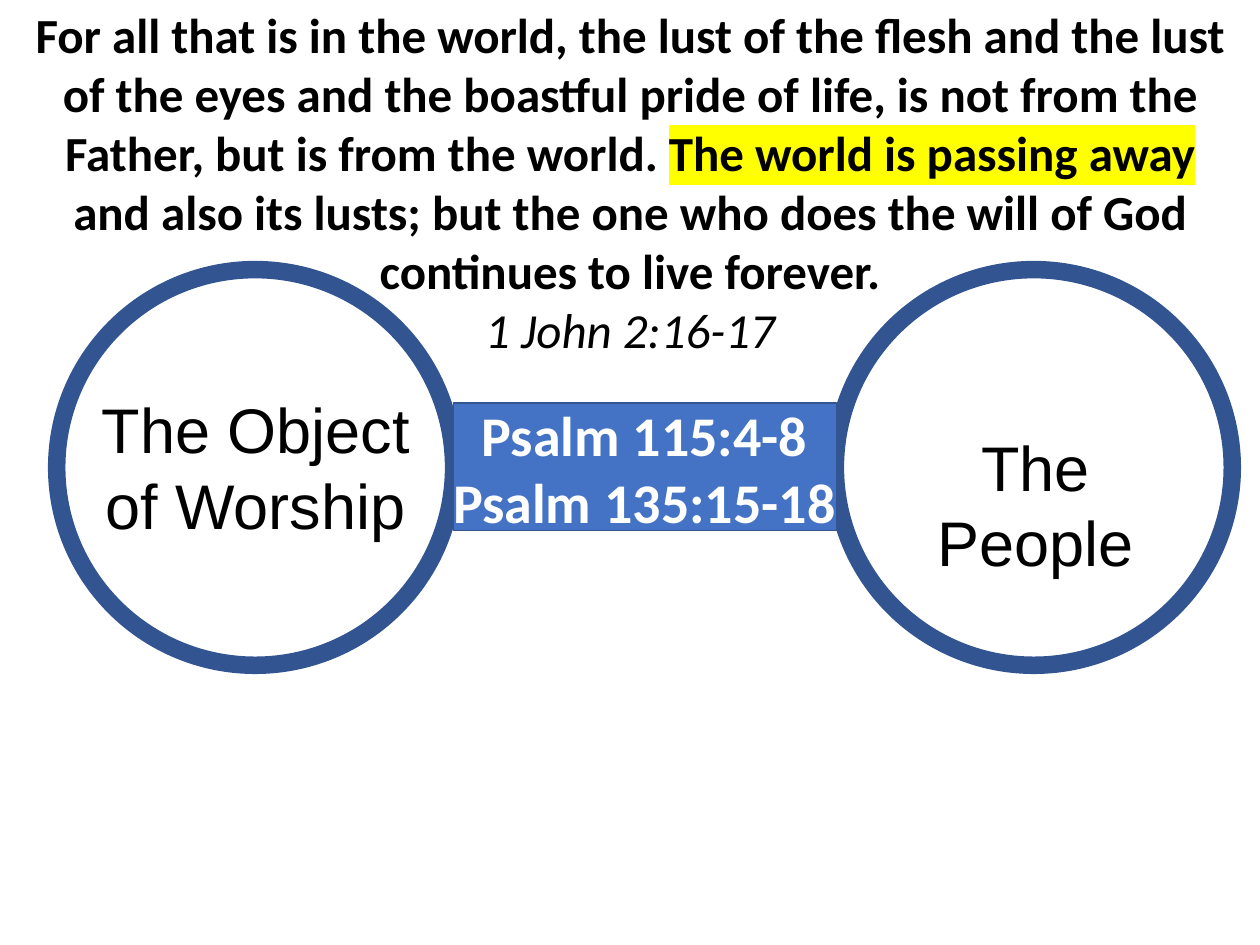
from lxml import etree
from pptx import Presentation
from pptx.enum import shapes, text
from pptx.oxml import ns
from pptx.dml.color import RGBColor
from pptx.util import Inches, Pt

COLORS = {
    "black": "000000",
    "white": "FFFFFF",
    "blue": "4472C4",
    "outline": "325491",
    "highlight": "FFFF00",
}


def rgb(name):
    return RGBColor.from_string(COLORS[name])


def add_shape(s, kind, box, fill, line_width):
    sp = s.shapes.add_shape(kind, *map(Inches, box))
    sp.shadow.inherit = False
    sp.fill.solid()
    sp.fill.fore_color.rgb = rgb(fill)
    sp.line.color.rgb = rgb("outline")
    sp.line.width = Pt(line_width)


def add_textbox(s, box):
    tf = s.shapes.add_textbox(*map(Inches, box)).text_frame
    tf.word_wrap = True
    tf.auto_size = text.MSO_AUTO_SIZE.SHAPE_TO_FIT_TEXT
    tf.paragraphs[0].alignment = text.PP_ALIGN.CENTER
    return tf


def add_run(p, words, size, font="Calibri", color="black", bold=False, italic=False):
    r = p.add_run()
    r.text = words
    r.font.size = Pt(size)
    r.font.bold = bold
    r.font.italic = italic
    r.font.color.rgb = rgb(color)
    r.font.name = font
    return r


def highlight(r):
    latin = r._r.get_or_add_rPr().find(ns.qn("a:latin"))
    mark = etree.Element(ns.qn("a:highlight"))
    etree.SubElement(mark, ns.qn("a:srgbClr"), val=COLORS["highlight"])
    latin.addprevious(mark)


def add_circle(s, left, label, label_box):
    add_shape(s, shapes.MSO_SHAPE.OVAL, (left, 2.14, 3.15, 3.14), "white", 10)
    tf = add_textbox(s, label_box)
    add_run(tf.paragraphs[0], label, 36, "Arial")


def add_psalms(s):
    add_shape(s, shapes.MSO_SHAPE.RECTANGLE, (3.6, 3.2, 3.04, 1.01), "blue", 1)
    for top, psalm in ((3.13, "Psalm 115:4-8"), (3.66, "Psalm 135:15-18")):
        tf = add_textbox(s, (3.47, top, 3.29, 0.64))
        add_run(tf.paragraphs[0], psalm, 32, color="white", bold=True)


def add_verse(s):
    tf = add_textbox(s, (0.11, -0.01, 9.78, 2.93))
    p = tf.paragraphs[0]
    add_run(p, "For all that is in the world, the lust of the flesh and the lust "
               "of the eyes and the boastful pride of life, is not from the "
               "Father, but is from the world. ", 28, bold=True)
    highlight(add_run(p, "The world is passing away ", 28, bold=True))
    add_run(p, "and also its lusts; but the one who does the will of God "
               "continues to live forever.", 28, bold=True)
    p = tf.add_paragraph()
    p.alignment = text.PP_ALIGN.CENTER
    add_run(p, "1 John 2:16-17", 28, italic=True)


def main():
    prs = Presentation()
    prs.slide_width, prs.slide_height = Inches(10), Inches(7.5)
    s = prs.slides.add_slide(prs.slide_layouts[6])
    add_circle(s, 0.45, "The Object of Worship", (0.7, 3.05, 2.66, 1.31))
    add_circle(s, 6.63, "The People", (6.89, 3.35, 2.66, 0.71))
    add_psalms(s)
    add_verse(s)
    prs.save("out.pptx")


if __name__ == "__main__":
    main()
